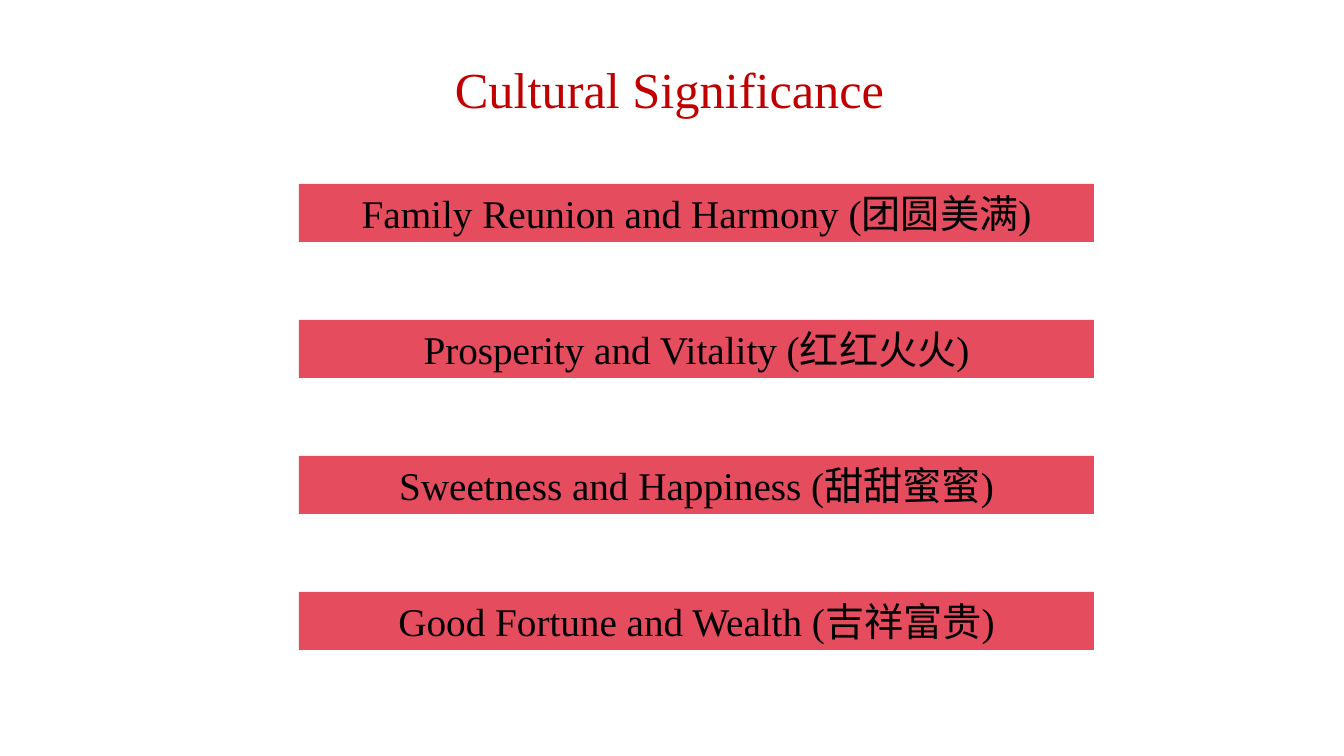
from dataclasses import dataclass

from pptx import Presentation
from pptx.dml.color import RGBColor
from pptx.enum.shapes import MSO_SHAPE
from pptx.enum.text import MSO_ANCHOR, PP_ALIGN
from pptx.util import Pt

RECT = MSO_SHAPE.RECTANGLE
MIDDLE = MSO_ANCHOR.MIDDLE
LEFT, CENTER = PP_ALIGN.LEFT, PP_ALIGN.CENTER
SCALE = 914400 / 100.8


@dataclass
class Theme:
    font: str = "Times New Roman"
    title: RGBColor = RGBColor(0xC0, 0x00, 0x00)
    bar: RGBColor = RGBColor(0xE5, 0x4C, 0x5E)
    ink: RGBColor = RGBColor(0x00, 0x00, 0x00)
    large: int = 36
    body: int = 28


theme = Theme()


def px(*sizes):
    return [round(size * SCALE) for size in sizes]


def write(shape, text, size, color, align):
    frame = shape.text_frame
    frame.word_wrap = True
    frame.text = text
    line = frame.paragraphs[0]
    line.alignment = align
    font = line.runs[0].font
    font.name = theme.font
    font.size = Pt(size)
    font.color.rgb = color


deck = Presentation()
deck.slide_width, deck.slide_height = px(1344, 756)
slide = deck.slides.add_slide(deck.slide_layouts[6])

title = slide.shapes.add_textbox(*px(445, 53, 455, 72))
write(title, "Cultural Significance", theme.large, theme.title, LEFT)

values = [
    "Family Reunion and Harmony (团圆美满)",
    "Prosperity and Vitality (红红火火)",
    "Sweetness and Happiness (甜甜蜜蜜)",
    "Good Fortune and Wealth (吉祥富贵)",
]
TOP, STEP = 184, 136
for row, value in enumerate(values):
    bar = slide.shapes.add_shape(RECT, *px(299, TOP + row * STEP, 795, 58))
    bar.shadow.inherit = False
    bar.fill.solid()
    bar.fill.fore_color.rgb = theme.bar
    bar.line.fill.background()
    bar.text_frame.vertical_anchor = MIDDLE
    write(bar, value, theme.body, theme.ink, CENTER)

deck.save("out.pptx")
